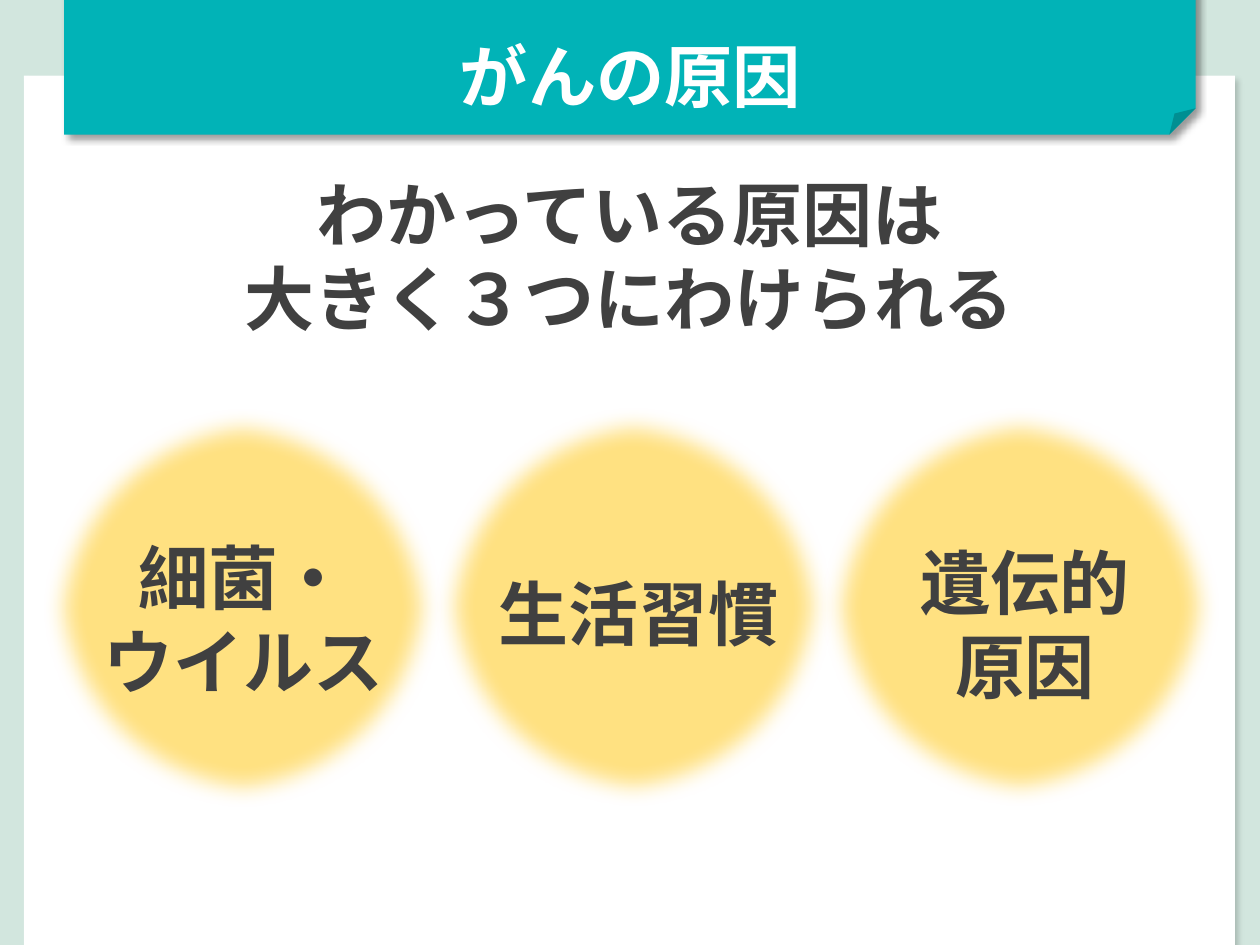
from typing import NamedTuple

from lxml import etree
from pptx import Presentation
from pptx import util as u
from pptx.dml.color import RGBColor
from pptx.enum import shapes, text
from pptx.oxml.ns import qn

FONT = "TeX Gyre Adventor"
MINT, WHITE, TEAL, YELLOW, INK = "D2E6DE", "FFFFFF", "01B3B7", "FFE181", "404040"
WIDTH, HEIGHT = 10, 7.5
CIRCLE_SIZE = 3.19


class Box(NamedTuple):
    """Left, top, width and height in inches."""
    left: float
    top: float
    width: float
    height: float

    def lengths(self) -> list:
        return [u.Inches(value) for value in self]


class Cause(NamedTuple):
    label: str
    circle_left: float
    circle_top: float
    label_box: Box


CAUSES = [
    Cause("生活習慣", 3.43, 3.22, Box(3.8, 4.48, 2.53, 0.77)),
    Cause("細菌・\nウイルス", 0.33, 3.23, Box(0.44, 4.19, 2.98, 1.45)),
    Cause("遺伝的\n原因", 6.5, 3.22, Box(6.87, 4.23, 2.53, 1.45)),
]


def color(hex_code: str) -> RGBColor:
    return RGBColor.from_string(hex_code)


def add_effect(shape, name: str, **attributes):
    """Put one effect in the shape's effect list and return its element."""
    properties = shape._element.spPr
    effects = properties.find(qn("a:effectLst"))
    return etree.SubElement(effects, qn(f"a:{name}"),
                            {key: str(value) for key, value in attributes.items()})


def add_shadow(shape, opacity: int, blur: float, distance: float) -> None:
    shadow = add_effect(shape, "outerShdw", blurRad=u.Pt(blur), dist=u.Pt(distance),
                        dir=45 * 60000, algn="tl", rotWithShape=0)
    black = etree.SubElement(shadow, qn("a:srgbClr"), val="000000")
    etree.SubElement(black, qn("a:alpha"), val=str(opacity * 1000))


def add_filled(slide, kind, box: Box, fill: str):
    shape = slide.shapes.add_shape(kind, *box.lengths())
    shape.shadow.inherit = False
    shape.fill.solid()
    shape.fill.fore_color.rgb = color(fill)
    shape.line.fill.background()
    return shape


def write(shape, content: str, size: float, ink: str) -> None:
    """Fill the shape with centred bold text, one paragraph a line."""
    frame = shape.text_frame
    frame.text = content
    frame.word_wrap = True
    frame.auto_size = text.MSO_AUTO_SIZE.NONE
    frame.vertical_anchor = text.MSO_ANCHOR.TOP
    for paragraph in frame.paragraphs:
        paragraph.alignment = text.PP_ALIGN.CENTER
        for run in paragraph.runs:
            run.font.name = FONT
            run.font.size = u.Pt(size)
            run.font.bold = True
            run.font.color.rgb = color(ink)
            etree.SubElement(run.font._element, qn("a:ea"), typeface=FONT)


def add_text(slide, content: str, box: Box) -> None:
    write(slide.shapes.add_textbox(*box.lengths()), content, 40, INK)


def add_title(slide, content: str, box: Box) -> None:
    title = slide.shapes.title
    title.left, title.top, title.width, title.height = box.lengths()
    write(title, content, 39, WHITE)
    slide.shapes._spTree.append(title._element)  # in front of the banner


def add_cause(slide, cause: Cause) -> None:
    box = Box(cause.circle_left, cause.circle_top, CIRCLE_SIZE, CIRCLE_SIZE)
    circle = add_filled(slide, shapes.MSO_SHAPE.OVAL, box, YELLOW)
    add_effect(circle, "softEdge", rad=u.Pt(12.5))
    add_text(slide, cause.label, cause.label_box)


def main() -> None:
    presentation = Presentation()
    presentation.slide_width = u.Inches(WIDTH)
    presentation.slide_height = u.Inches(HEIGHT)
    slide = presentation.slides.add_slide(presentation.slide_layouts[5])
    slide.background.fill.solid()
    slide.background.fill.fore_color.rgb = color(MINT)

    paper = add_filled(slide, shapes.MSO_SHAPE.RECTANGLE, Box(0.19, 0.6, 9.61, 7.07), WHITE)
    add_shadow(paper, 18, 3, 4)
    banner = add_filled(slide, shapes.MSO_SHAPE.FOLDED_CORNER, Box(0.51, -0.19, 8.98, 1.26), TEAL)
    add_shadow(banner, 40, 4, 3)

    add_title(slide, "がんの原因", Box(0.36, 0.22, 9.29, 0.77))
    add_text(slide, "わかっている原因は\n大きく３つにわけられる", Box(0.83, 1.31, 8.33, 1.45))
    for cause in CAUSES:
        add_cause(slide, cause)
    presentation.save("out.pptx")


if __name__ == "__main__":
    main()
